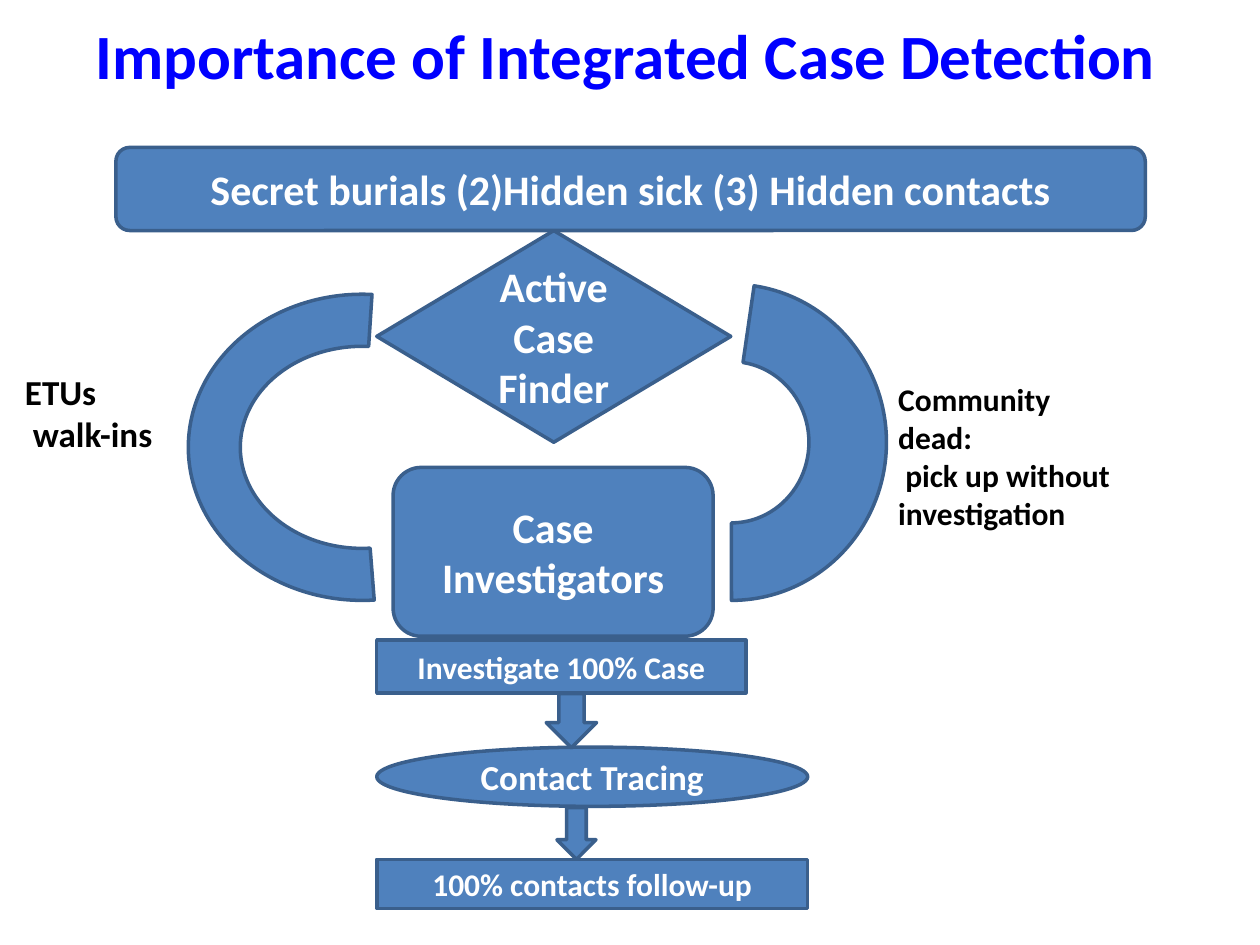
"""Build the slide on integrated case detection as a flow of shapes."""
from pptx import Presentation
from pptx.dml.color import RGBColor
from pptx.enum import shapes, text
from pptx.util import Inches, Pt

COLORS = {"fill": "4F81BD", "line": "3A5F8C", "title": "0000FF", "label": "000000", "shape_text": "FFFFFF"}
KIND = shapes.MSO_SHAPE
ALIGN = text.PP_ALIGN


def color(name):
    return RGBColor.from_string(COLORS[name])


def write(box, lines, size, color_name, align):
    frame = box.text_frame
    for index, line in enumerate(lines):
        para = frame.paragraphs[0] if index == 0 else frame.add_paragraph()
        para.alignment = align
        span = para.add_run()
        span.text = line
        for name, value in {"name": "Calibri", "size": Pt(size), "bold": True}.items():
            setattr(span.font, name, value)
        span.font.color.rgb = color(color_name)


deck = Presentation()
deck.slide_width, deck.slide_height = Inches(10), Inches(7.5)
page = deck.slides.add_slide(deck.slide_layouts[6])

flow = [
    (KIND.BLOCK_ARC, (4.55, 2.28, 2.51, 2.46), 90, (112.94, 0, 0.25), "", 0),
    (KIND.BLOCK_ARC, (1.66, 2.17, 2.43, 2.76), 270, (105.29, 2.21, 0.17), "", 0),
    (KIND.ROUNDED_RECTANGLE, (3.12, 3.71, 2.54, 1.34), 0, (), "Case Investigators", 24),
    (KIND.OVAL, (2.99, 5.93, 3.42, 0.47), 0, (), "Contact Tracing", 20),
    (KIND.FLOWCHART_DECISION, (2.99, 1.83, 2.81, 1.68), 0, (), "Active Case Finder", 24),
    (KIND.ROUNDED_RECTANGLE, (0.92, 1.17, 8.17, 0.66), 0, (),
     "Secret burials (2)Hidden sick (3) Hidden contacts", 24),
    (KIND.RECTANGLE, (2.99, 5.08, 2.93, 0.42), 0, (), "Investigate 100% Case", 18),
    (KIND.RIGHT_ARROW, (4.32, 5.52, 0.43, 0.4), 90, (), "", 0),
    (KIND.RIGHT_ARROW, (4.37, 6.46, 0.41, 0.31), 90, (), "", 0),
    (KIND.RECTANGLE, (2.99, 6.82, 3.42, 0.39), 0, (), "100% contacts follow-up", 18),
]
for kind, place, rotation, adjustments, caption, size in flow:
    shape = page.shapes.add_shape(kind, *map(Inches, place))
    shape.rotation = rotation
    shape.shadow.inherit = False
    for index, value in enumerate(adjustments):
        shape.adjustments[index] = value
    shape.fill.solid()
    shape.fill.fore_color.rgb = color("fill")
    shape.line.color.rgb = color("line")
    shape.line.width = Pt(2)
    if caption:
        shape.text_frame.vertical_anchor = text.MSO_ANCHOR.MIDDLE
        write(shape, [caption], size, "shape_text", ALIGN.CENTER)

labels = [
    ((0.1, 2.89, 1.23, 0.77), False, ["ETUs", " walk-ins"], 20, "label", ALIGN.LEFT),
    ((7.03, 2.97, 1.91, 0.89), True, ["Community dead:", " pick up without", "investigation"],
     18, "label", ALIGN.LEFT),
    ((0.1, 0.08, 9.73, 0.71), True, ["Importance of Integrated Case Detection"], 36, "title", ALIGN.CENTER),
]
for place, wrap, lines, size, color_name, align in labels:
    box = page.shapes.add_textbox(*map(Inches, place))
    for name, value in {"word_wrap": wrap, "auto_size": text.MSO_AUTO_SIZE.SHAPE_TO_FIT_TEXT}.items():
        setattr(box.text_frame, name, value)
    write(box, lines, size, color_name, align)

deck.save("out.pptx")
